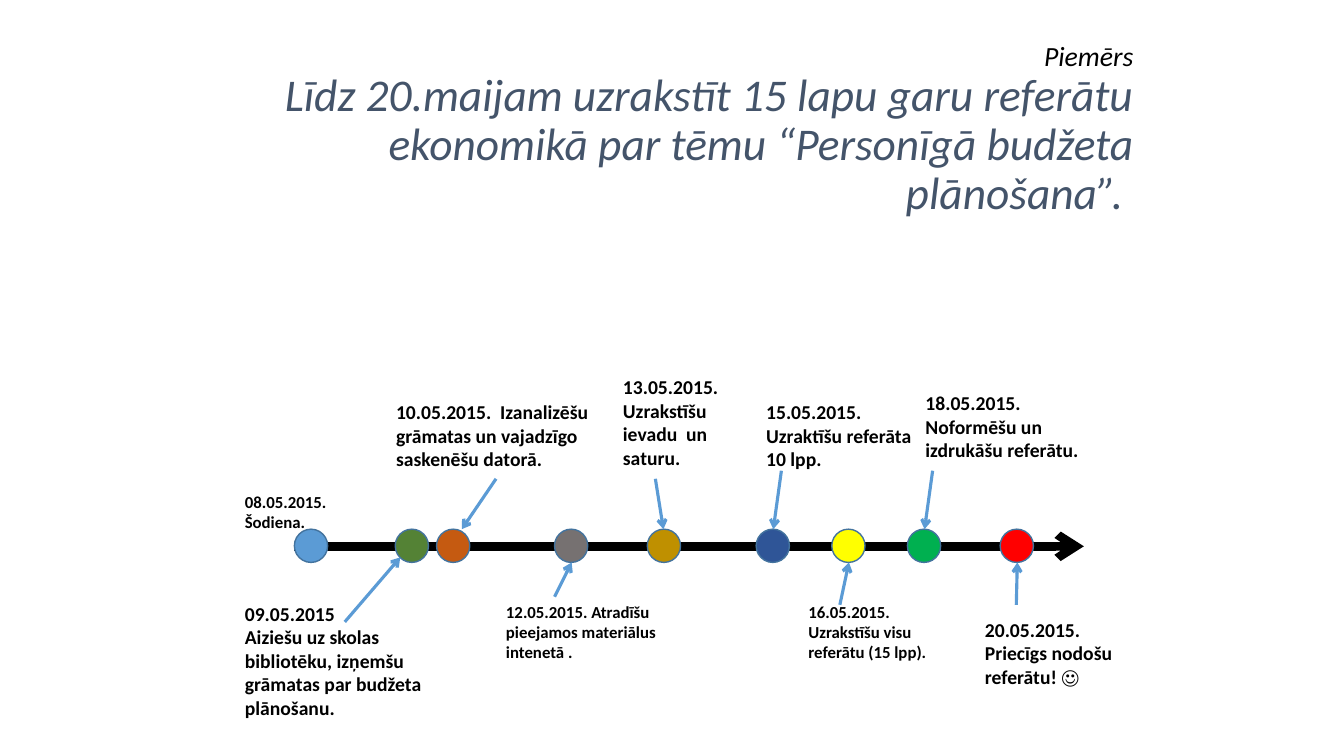
"""Build a timeline slide for writing a school report."""
import lxml.etree
import pptx
import pptx.dml.color
import pptx.enum.shapes
import pptx.enum.text
import pptx.oxml.ns
import pptx.util

Inches = pptx.util.Inches
Pt = pptx.util.Pt
qn = pptx.oxml.ns.qn


def paint(form, tone):
    if hasattr(form, "solid"):
        form.solid()
        form = form.fore_color
    form.rgb = pptx.dml.color.RGBColor.from_string(tone)


def arrow(start, end, tone, width):
    line = slide.shapes.add_connector(
        pptx.enum.shapes.MSO_CONNECTOR.STRAIGHT, *map(Inches, start + end))
    paint(line.line.fill, tone)
    line.line.width = Pt(width)
    edge = line.line._get_or_add_ln()
    lxml.etree.SubElement(edge, qn("a:tailEnd"), type="arrow")
    lxml.etree.SubElement(line._element.spPr, qn("a:effectLst"))


deck = pptx.Presentation()
deck.slide_width, deck.slide_height = Inches(13.33), Inches(7.5)
slide = deck.slides.add_slide(deck.slide_layouts[6])

title = slide.shapes.add_textbox(Inches(2.17), Inches(0.92), Inches(9.17), Inches(1.25))
frame = title.text_frame
frame.word_wrap = True
frame.margin_bottom = Inches(0.54)
frame.vertical_anchor = pptx.enum.text.MSO_ANCHOR.MIDDLE
para = frame.paragraphs[0]
para.alignment = pptx.enum.text.PP_ALIGN.RIGHT
para.line_spacing = 0.9
heads = [
    ("Piemērs", 19.8, "000000"),
    ("Līdz 20.maijam uzrakstīt 15 lapu garu referātu ekonomikā "
     "par tēmu “Personīgā budžeta plānošana”. ", 32.4, "44546A"),
]
for rank, (words, size, tone) in enumerate(heads):
    if rank:
        para.add_line_break()
    run = para.add_run()
    run.text = words
    run.font.name, run.font.size, run.font.italic = "Calibri", Pt(size), True
    paint(run.font.color, tone)

axis, dot = 5.42, 0.33
arrow((2.92, axis), (10.75, axis), "000000", 6)

dots = [
    (2.92, "5B9BD5"), (3.92, "548235"), (4.33, "C55A11"),
    (5.5, "767171"), (6.42, "BF9000"), (7.5, "2F5597"),
    (8.25, "FFFF00"), (9, "00B050"), (9.92, "FF0000"),
]
for left, tone in dots:
    disc = slide.shapes.add_shape(
        pptx.enum.shapes.MSO_SHAPE.OVAL,
        Inches(left), Inches(5.25), Inches(dot), Inches(dot))
    disc.shadow.inherit = False
    paint(disc.fill, tone)
    paint(disc.line.fill, "43739E")
    disc.line.width = Pt(1)

links = [
    ((3.42, 6.17), (3.97, 5.53)), ((4.92, 4.75), (4.58, 5.25)),
    ((5.5, 5.92), (5.67, 5.58)), ((6.5, 4.75), (6.58, 5.25)),
    ((7.75, 4.67), (7.67, 5.25)), ((8.33, 6), (8.42, 5.58)),
    ((9.25, 4.67), (9.17, 5.25)), ((10.08, 6), (10.09, 5.58)),
]
for start, end in links:
    arrow(start, end, "5B9BD5", 2.25)

notes = [
    (2.33, 4.83, 1.33, 0.5, 12, ["08.05.2015. Šodiena."]),
    (2.33, 5.92, 2.08, 1.28, 14, [
        "09.05.2015",
        "Aiziešu uz skolas bibliotēku, izņemšu grāmatas par budžeta plānošanu."]),
    (3.83, 3.92, 2.33, 0.81, 14, [
        "10.05.2015.  Izanalizēšu grāmatas un vajadzīgo saskenēšu datorā."]),
    (4.92, 5.92, 2.08, 0.71, 12, [
        "12.05.2015. Atradīšu pieejamos materiālus intenetā ."]),
    (6.08, 3.67, 1.58, 1.04, 14, ["13.05.2015. Uzrakstīšu ievadu  un saturu."]),
    (7.5, 3.92, 1.75, 0.81, 14, ["15.05.2015. Uzraktīšu referāta 10 lpp."]),
    (7.92, 5.92, 1.42, 0.71, 12, ["16.05.2015. Uzrakstīšu visu referātu (15 lpp)."]),
    (9.08, 3.83, 1.75, 0.81, 14, ["18.05.2015. Noformēšu un izdrukāšu referātu."]),
    (9.67, 6.08, 1.5, 0.81, 14, ["20.05.2015. Priecīgs nodošu referātu! ☺"]),
]
for left, top, width, height, size, lines in notes:
    box = slide.shapes.add_textbox(*map(Inches, (left, top, width, height)))
    frame = box.text_frame
    frame.word_wrap = True
    frame.auto_size = pptx.enum.text.MSO_AUTO_SIZE.SHAPE_TO_FIT_TEXT
    for rank, words in enumerate(lines):
        para = frame.add_paragraph() if rank else frame.paragraphs[0]
        run = para.add_run()
        run.text = words
        run.font.name, run.font.size, run.font.bold = "Calibri", Pt(size), True
        paint(run.font.color, "000000")

deck.save("out.pptx")
